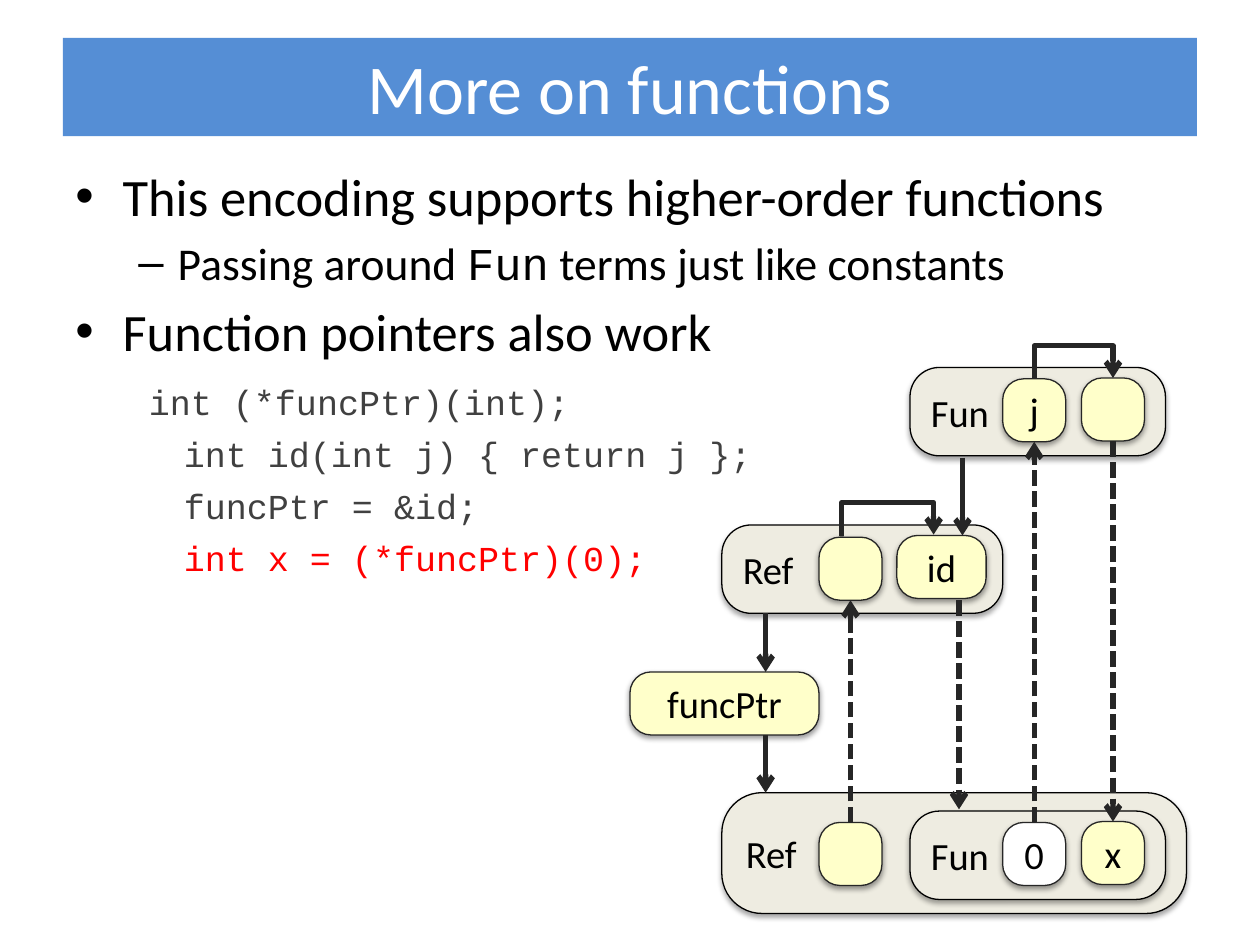
from lxml import etree
from pptx import Presentation
from pptx.dml.color import RGBColor
from pptx.enum.dml import MSO_LINE
from pptx.enum.shapes import MSO_CONNECTOR, MSO_SHAPE
from pptx.enum.text import MSO_ANCHOR, PP_ALIGN
from pptx.oxml.ns import qn
from pptx.util import Pt

RECT, ROUND = MSO_SHAPE.RECTANGLE, MSO_SHAPE.ROUNDED_RECTANGLE
LINE, ELBOW = MSO_CONNECTOR.STRAIGHT, MSO_CONNECTOR.ELBOW
LEFT, CENTER = PP_ALIGN.LEFT, PP_ALIGN.CENTER
MIDDLE, DASH = MSO_ANCHOR.MIDDLE, MSO_LINE.SQUARE_DOT
TOP, BOTTOM = 0, 2
SANS, MONO = "Calibri", "Courier New"

HUES = {
    "band": "558ED5", "panel": "EEECE1", "cell": "FFFFCA", "white": "FFFFFF",
    "black": "000000", "ink": "262626", "code": "404040", "red": "FF0000",
}

TITLE = "More on functions"
POINTS = [
    (30, 27, -27, 0, "•", [("This encoding supports higher-order functions", SANS)]),
    (26, 58.5, -22.5, 4.5, "–", [("Passing around ", SANS), ("Fun", MONO),
                                 (" terms just like constants", SANS)]),
    (30, 27, -27, 5.5, "•", [("Function pointers also work", SANS)]),
]
CODE = [
    ("int (*funcPtr)(int);", 42, 11, "code"),
    ("int id(int j) { return j };", 62, 5.6, "code"),
    ("funcPtr = &id;", 62, 5.6, "code"),
    ("int x = (*funcPtr)(0);", 62, 5.6, "red"),
]

PANELS = [
    ("Ref", 412.5, 453, 265.5, 69),
    ("Fun", 520, 210, 146, 50.5),
    ("Fun", 520, 463.5, 146, 50.5),
    ("Ref", 412.5, 300, 160.5, 50.5),
]
SIDE = 36
CELLS = {
    "param": ("j", 573, 216.5, SIDE, "cell"),
    "result": ("", 618, 216, SIDE, "cell"),
    "zero": ("0", 573, 470, SIDE, "white"),
    "x": ("x", 618, 469.5, SIDE, "cell"),
    "source": ("", 468, 307, SIDE, "cell"),
    "id": ("id", 512.5, 306, 51, "cell"),
    "pointer": ("funcPtr", 360, 384, 108, "cell"),
    "target": ("", 468, 470, SIDE, "cell"),
}
JOINS = [("target", "source"), ("zero", "param"), ("result", "x")]
DROPS = [
    (437.5, 350.5, 384, False),
    (437.5, 420, 453, False),
    (548, 343, 462.5, True),
    (550, 261.5, 306, False),
]
BENDS = [(591, 216.5, 636, 216), (481, 306, 533.5, 305.5)]
RISE = 18.5


def color(name):
    return RGBColor.from_string(HUES[name])


def style(run, size, hue, face=SANS):
    run.font.size = Pt(size)
    run.font.name = face
    run.font.color.rgb = color(hue)


def block(kind, text, box, fill, size, hue, align):
    shape = slide.shapes.add_shape(kind, *map(Pt, box))
    shape.shadow.inherit = False
    shape.fill.solid()
    shape.fill.fore_color.rgb = color(fill)
    frame = shape.text_frame
    frame.vertical_anchor = MIDDLE
    if text:
        frame.text = text
        para = frame.paragraphs[0]
        para.alignment = align
        style(para.runs[0], size, hue)
    return shape


def node(text, box, fill, edge, align, alpha, gap):
    shape = block(ROUND, text, box, fill, 22, "black", align)
    shape.adjustments[0] = 0.333
    shape.line.color.rgb = color(edge)
    shape.line.width = Pt(0.75)
    effects = shape.element.spPr.find(qn("a:effectLst"))
    shade = etree.SubElement(effects, qn("a:outerShdw"), blurRad=str(Pt(3.1)),
                             dist=str(Pt(gap)), dir="5400000", rotWithShape="0")
    tint = etree.SubElement(shade, qn("a:srgbClr"), val=HUES["black"])
    etree.SubElement(tint, qn("a:alpha"), val=str(alpha * 1000))
    return shape


def arrow(kind, ends, dashed=False):
    link = slide.shapes.add_connector(kind, *map(Pt, ends))
    link.line.color.rgb = color("ink")
    link.line.width = Pt(3)
    if dashed:
        link.line.dash_style = DASH
    props = link.element.spPr
    etree.SubElement(props.find(qn("a:ln")), qn("a:tailEnd"), type="arrow")
    etree.SubElement(props, qn("a:effectLst"))
    return link


def bend(x1, y1, x2, y2):
    mid, level = (x1 + x2) / 2, (y1 + y2) / 2
    drop, span = y1 - y2, x2 - x1
    link = arrow(ELBOW, (mid - drop / 2, level - span / 2,
                         mid + drop / 2, level + span / 2))
    props = link.element.spPr
    props.find(qn("a:xfrm")).set("rot", "16200000")
    geom = props.find(qn("a:prstGeom"))
    guides = geom.find(qn("a:avLst"))
    if guides is None:
        guides = etree.SubElement(geom, qn("a:avLst"))
    etree.SubElement(guides, qn("a:gd"), name="adj1",
                     fmla=f"val {round(RISE / drop * 100000)}")


def write(para, parts, size, hue, margin, indent, gap, mark=None):
    para.text = "".join(text for text, face in parts[:1])
    for text, face in parts[1:]:
        para.add_run().text = text
    for run, (text, face) in zip(para.runs, parts):
        style(run, size, hue, face)
    para.space_before = Pt(gap)
    props = para._p.get_or_add_pPr()
    props.set("marL", str(Pt(margin)))
    props.set("indent", str(Pt(indent)))
    if mark:
        etree.SubElement(props, qn("a:buFont"), typeface="Arial")
        etree.SubElement(props, qn("a:buChar"), char=mark)


deck = Presentation()
deck.slide_width, deck.slide_height = Pt(720), Pt(540)
slide = deck.slides.add_slide(deck.slide_layouts[6])

band = block(RECT, TITLE, (36, 21.6, 648, 56.2), "band", 40, "white", CENTER)
band.line.fill.background()

body = slide.shapes.add_textbox(Pt(36), Pt(90), Pt(648), Pt(294)).text_frame
body.word_wrap = True
rows = [(parts, size, "black", margin, indent, gap, mark)
        for size, margin, indent, gap, mark, parts in POINTS]
rows += [([(text, MONO)], 20, hue, margin, 0, gap)
         for text, margin, gap, hue in CODE]
for i, row in enumerate(rows):
    write(body.add_paragraph() if i else body.paragraphs[0], *row)

for text, *box in PANELS:
    node(text, box, "panel", "black", LEFT, 35, 1.8)
cells = {}
for name, (text, x, y, width, fill) in CELLS.items():
    cells[name] = node(text, (x, y, width, SIDE), fill, "ink", CENTER, 38, 1.6)

for ends in BENDS:
    bend(*ends)
for x, start, end, dashed in DROPS:
    arrow(LINE, (x, start, x, end), dashed)
for first, last in JOINS:
    up = cells[first].top > cells[last].top
    link = arrow(LINE, (0, 0, 0, 0), True)
    link.begin_connect(cells[first], TOP if up else BOTTOM)
    link.end_connect(cells[last], BOTTOM if up else TOP)

deck.save("out.pptx")
